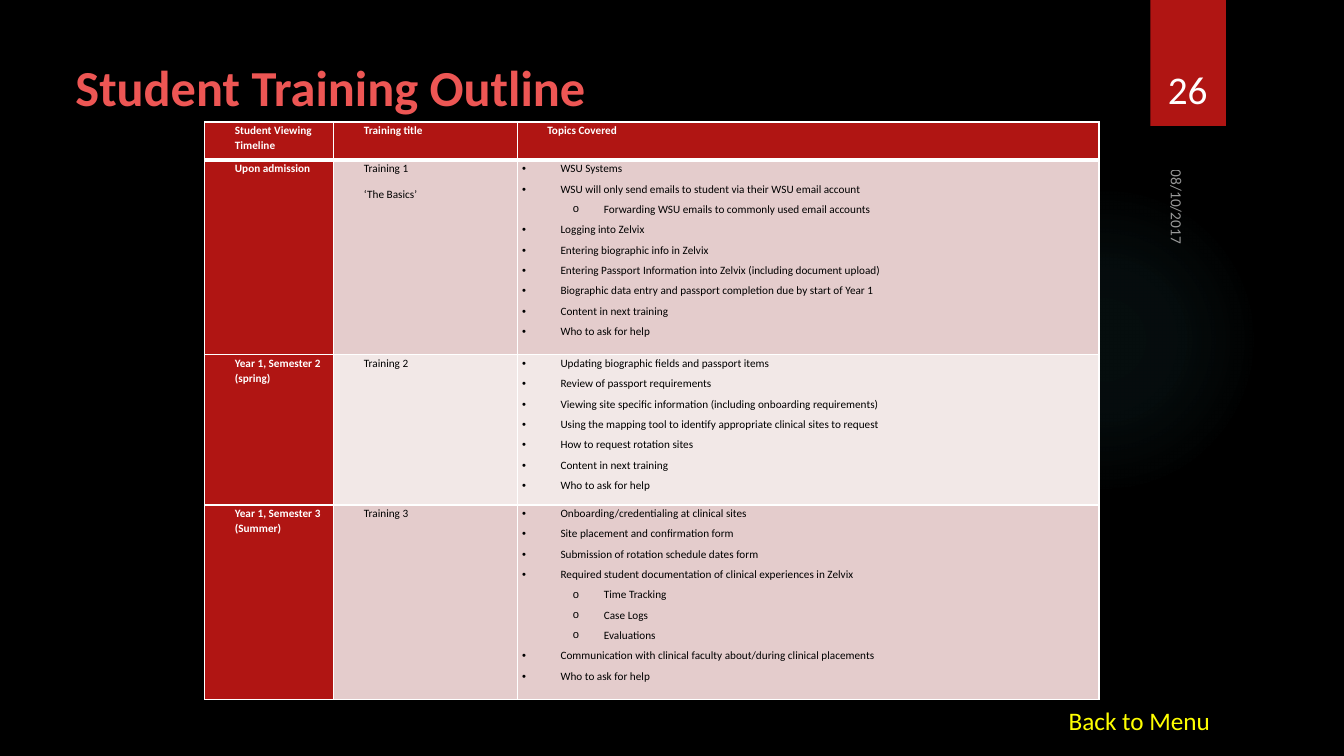
"""Build the student training outline slide."""
from dataclasses import dataclass

from lxml.etree import SubElement
from pptx import Presentation
from pptx.dml.color import RGBColor
from pptx.enum.shapes import MSO_SHAPE as SHAPE
from pptx.enum.text import MSO_ANCHOR as ANCHOR, MSO_AUTO_SIZE as AUTO, PP_ALIGN as ALIGN
from pptx.oxml import parse_xml
from pptx.oxml.ns import nsdecls, qn
from pptx.util import Inches, Pt

FONT = "Calibri"
RED, WHITE, BLACK = "B01513", "FFFFFF", "000000"
BANDS = ("E4CCCC", "F2E8E7")
HEADERS = ("Student Viewing Timeline", "Training title", "Topics Covered")
COL_WIDTHS = (1.28, 1.82, 5.77)
ROW_HEIGHTS = (0.38, 1.93, 1.49, 1.93)


@dataclass
class Label:
    text: str
    box: tuple[float, float, float, float]
    size: float
    color: str
    bold: bool = False
    anchor: ANCHOR = ANCHOR.TOP
    align: ALIGN = ALIGN.LEFT
    rotation: float = 0
    alpha: int = 100
    wrap: bool = True


@dataclass
class Topic:
    text: str
    level: int = 0


@dataclass
class Training:
    timeline: str
    titles: list[str]
    topics: list[Topic]


@dataclass
class Bullet:
    char: str
    font: str
    margin: float
    hang: float
    tab: float


BULLETS = (Bullet("•", "Arial", 0.38, 0.38, 0.5), Bullet("o", "Courier New", 0.81, 0.31, 1))

LABELS = [
    Label("Student Training Outline", (0.65, 0.24, 9.65, 0.97), 36, "ED5654",
          bold=True, anchor=ANCHOR.BOTTOM),
    Label("Back to Menu", (10.5, 6.95, 1.62, 0.4), 18, "FFFF00", wrap=False),
    Label("08/10/2017", (11.11, 1.96, 1.08, 0.33), 11, WHITE, rotation=90, alpha=60),
    Label("26", (11.32, 0.32, 0.92, 0.84), 28, WHITE, anchor=ANCHOR.BOTTOM, align=ALIGN.CENTER),
]

TRAININGS = [
    Training("Upon admission", ["Training 1", "‘The Basics’"], [
        Topic("WSU Systems"),
        Topic("WSU will only send emails to student via their WSU email account"),
        Topic("Forwarding WSU emails to commonly used email accounts", 1),
        Topic("Logging into Zelvix"),
        Topic("Entering biographic info in Zelvix"),
        Topic("Entering Passport Information into Zelvix (including document upload)"),
        Topic("Biographic data entry and passport completion due by start of Year 1"),
        Topic("Content in next training"),
        Topic("Who to ask for help"),
    ]),
    Training("Year 1, Semester 2 (spring)", ["Training 2"], [
        Topic("Updating biographic fields and passport items"),
        Topic("Review of passport requirements"),
        Topic("Viewing site specific information (including onboarding requirements)"),
        Topic("Using the mapping tool to identify appropriate clinical sites to request"),
        Topic("How to request rotation sites"),
        Topic("Content in next training"),
        Topic("Who to ask for help"),
    ]),
    Training("Year 1, Semester 3 (Summer)", ["Training 3"], [
        Topic("Onboarding/credentialing at clinical sites"),
        Topic("Site placement and confirmation form"),
        Topic("Submission of rotation schedule dates form"),
        Topic("Required student documentation of clinical experiences in Zelvix"),
        Topic("Time Tracking", 1),
        Topic("Case Logs", 1),
        Topic("Evaluations", 1),
        Topic("Communication with clinical faculty about/during clinical placements"),
        Topic("Who to ask for help"),
    ]),
]


def rgb(color: str) -> RGBColor:
    return RGBColor.from_string(color)


def style_runs(p, size: float, color: str, bold: bool) -> None:
    for r in p.runs:
        r.font.name, r.font.size, r.font.bold = FONT, Pt(size), bold
        r.font.color.rgb = rgb(color)


def add_plain_shape(s, kind: SHAPE, box: tuple[float, float, float, float]):
    sp = s.shapes.add_shape(kind, *map(Inches, box))
    sp.shadow.inherit = False
    sp.line.fill.background()
    return sp


def add_glow(s) -> None:
    sp = add_plain_shape(s, SHAPE.OVAL, (9.41, 1.83, 3.08, 3.08))
    sp.fill.background()
    stops = "".join(
        f'<a:gs pos="{pos * 1000}"><a:srgbClr val="50B9C1">'
        f'<a:alpha val="{alpha * 1000}"/></a:srgbClr></a:gs>'
        for pos, alpha in ((0, 7), (36, 6), (69, 0), (100, 0)))
    gradient = parse_xml(
        f'<a:gradFill {nsdecls("a")}><a:gsLst>{stops}</a:gsLst><a:path path="circle">'
        '<a:fillToRect l="50000" t="50000" r="50000" b="50000"/></a:path></a:gradFill>')
    props = sp.element.spPr
    props.replace(props.find(qn("a:noFill")), gradient)


def add_number_tab(s) -> None:
    sp = add_plain_shape(s, SHAPE.RECTANGLE, (11.41, 0, 0.75, 1.25))
    sp.fill.solid()
    sp.fill.fore_color.rgb = rgb(RED)
    sp.element.spPr.find(qn("a:effectLst")).append(parse_xml(
        f'<a:outerShdw {nsdecls("a")} blurRad="{Pt(3)}" dist="{Pt(2)}" dir="5400000">'
        f'<a:srgbClr val="{BLACK}"><a:alpha val="45000"/></a:srgbClr></a:outerShdw>'))


def add_label(s, label: Label) -> None:
    sp = s.shapes.add_textbox(*map(Inches, label.box))
    sp.rotation = label.rotation
    tf = sp.text_frame
    tf.text = label.text
    tf.word_wrap, tf.vertical_anchor = label.wrap, label.anchor
    if not label.wrap:
        tf.auto_size = AUTO.SHAPE_TO_FIT_TEXT
    p = tf.paragraphs[0]
    p.alignment = label.align
    style_runs(p, label.size, label.color, label.bold)
    if label.alpha < 100:
        for color in p.runs[0].font.fill._xPr.iter(qn("a:srgbClr")):
            SubElement(color, qn("a:alpha"), val=str(label.alpha * 1000))


def format_cell(cell, fill: str, top: float = 1, bottom: float = 1) -> None:
    cell.margin_left = cell.margin_right = Inches(0.05)
    cell.margin_top, cell.margin_bottom = Inches(0.01), 0
    cell.fill.solid()
    cell.fill.fore_color.rgb = rgb(fill)
    borders = (("L", 1), ("R", 1), ("T", top), ("B", bottom))
    for i, (side, width) in enumerate(borders):
        cell._tc.tcPr.insert(i, parse_xml(
            f'<a:ln{side} {nsdecls("a")} w="{Pt(width)}"><a:solidFill>'
            f'<a:srgbClr val="{WHITE}"/></a:solidFill></a:ln{side}>'))


def write_cell(cell, lines: list[str], color: str, bold: bool) -> None:
    cell.text_frame.text = "\n".join(lines)
    for p in cell.text_frame.paragraphs:
        p.line_spacing, p.space_after = 1.07, Pt(8)
        p._p.get_or_add_pPr().set("marL", str(Inches(0.25)))
        style_runs(p, 8, color, bold)


def write_topics(cell, topics: list[Topic]) -> None:
    cell.text_frame.text = "\n".join(t.text for t in topics)
    for p, topic in zip(cell.text_frame.paragraphs, topics):
        bullet = BULLETS[topic.level]
        p.level, p.line_spacing, p.space_after = topic.level, 1.07, Pt(4)
        props = p._p.get_or_add_pPr()
        props.set("marL", str(Inches(bullet.margin)))
        props.set("indent", str(-Inches(bullet.hang)))
        SubElement(props, qn("a:buFont"), typeface=bullet.font)
        SubElement(props, qn("a:buChar"), char=bullet.char)
        tabs = SubElement(props, qn("a:tabLst"))
        SubElement(tabs, qn("a:tab"), pos=str(Inches(bullet.tab)), algn="l")
        style_runs(p, 8, BLACK, False)


def add_training_table(s) -> None:
    box = (2.03, 1.21, sum(COL_WIDTHS), sum(ROW_HEIGHTS))
    table = s.shapes.add_table(len(ROW_HEIGHTS), len(COL_WIDTHS), *map(Inches, box)).table
    for column, width in zip(table.columns, COL_WIDTHS):
        column.width = Inches(width)
    for row, height in zip(table.rows, ROW_HEIGHTS):
        row.height = Inches(height)
    for cell, header in zip(table.rows[0].cells, HEADERS):
        format_cell(cell, RED, bottom=3)
        write_cell(cell, [header], WHITE, True)
    for i, training in enumerate(TRAININGS):
        band = BANDS[i % 2]
        timeline, title, topics = cells = list(table.rows[i + 1].cells)
        for cell, fill in zip(cells, (RED, band, band)):
            format_cell(cell, fill, top=1 if i else 3)
        write_cell(timeline, [training.timeline], WHITE, True)
        write_cell(title, training.titles, BLACK, False)
        write_topics(topics, training.topics)


def main() -> None:
    prs = Presentation()
    prs.slide_width, prs.slide_height = Inches(13.33), Inches(7.5)
    s = prs.slides.add_slide(prs.slide_layouts[6])
    s.background.fill.solid()
    s.background.fill.fore_color.rgb = rgb(BLACK)
    add_glow(s)
    add_number_tab(s)
    add_training_table(s)
    for label in LABELS:
        add_label(s, label)
    prs.save("out.pptx")


if __name__ == "__main__":
    main()
